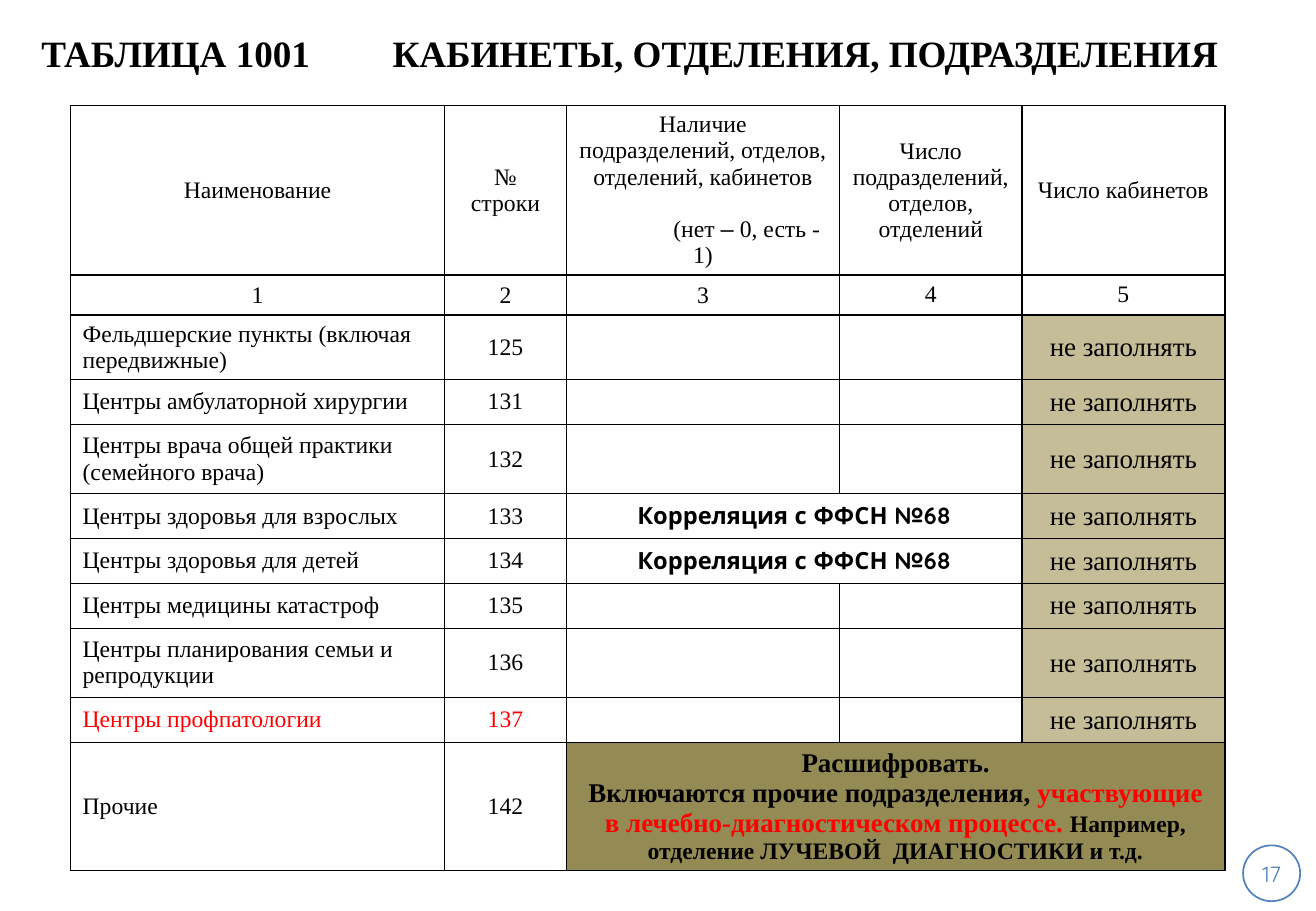
import pptx
import pptx.util
import pptx.dml.color
import pptx.enum.shapes
import pptx.enum.text
import pptx.oxml
import pptx.oxml.ns

Inches = pptx.util.Inches
Pt = pptx.util.Pt
RGBColor = pptx.dml.color.RGBColor
ALIGN = pptx.enum.text.PP_ALIGN
ANCHOR = pptx.enum.text.MSO_ANCHOR
NAMESPACE = pptx.oxml.ns.nsdecls("a")

COLORS = {
    "black": "000000",
    "white": "FFFFFF",
    "red": "FF0000",
    "blue": "4F81BD",
    "not_filled": "C4BD97",
    "explained": "948A54",
}
BASE = {"name": "Times New Roman", "size": Pt(14), "bold": False}
LARGE = {"size": Pt(16)}
LARGE_BOLD = {"size": Pt(16), "bold": True}
CORRELATION = {"name": "Quicksand", "bold": True}


def add_run(paragraph, text, style, color="black"):
    run = paragraph.add_run()
    run.text = text
    for attribute, value in {**BASE, **style}.items():
        setattr(run.font, attribute, value)
    run.font.color.rgb = RGBColor.from_string(COLORS[color])


def fill_half_transparent(cell, color):
    cell.fill.solid()
    cell.fill.fore_color.rgb = RGBColor.from_string(COLORS[color])
    color_element = cell._tc.tcPr.find(".//" + pptx.oxml.ns.qn("a:srgbClr"))
    color_element.append(pptx.oxml.parse_xml(f'<a:alpha {NAMESPACE} val="50000"/>'))


presentation = pptx.Presentation()
presentation.slide_width = Inches(10.83)
presentation.slide_height = Inches(7.5)
slide = presentation.slides.add_slide(presentation.slide_layouts[5])

# Title, its two parts set apart by a tab stop
title = slide.shapes.title
title.left, title.top = Inches(0.34), Inches(0)
title.width, title.height = Inches(10.28), Inches(0.86)
title_format = {
    "margin_left": 0, "margin_right": Inches(0.09),
    "margin_top": Inches(0.05), "margin_bottom": Inches(0.05),
    "vertical_anchor": ANCHOR.MIDDLE, "word_wrap": True,
    "auto_size": pptx.enum.text.MSO_AUTO_SIZE.NONE,
}
for attribute, value in title_format.items():
    setattr(title.text_frame, attribute, value)
paragraph = title.text_frame.paragraphs[0]
paragraph.alignment = ALIGN.LEFT
paragraph._p.get_or_add_pPr().append(pptx.oxml.parse_xml(
    f'<a:tabLst {NAMESPACE}><a:tab pos="{Inches(2.89)}" algn="l"/></a:tabLst>'))
add_run(paragraph, "ТАБЛИЦА 1001\tКАБИНЕТЫ, ОТДЕЛЕНИЯ, ПОДРАЗДЕЛЕНИЯ",
        {"size": Pt(22), "bold": True})

# Table contents
headers = [
    "Наименование", "№ строки",
    "Наличие подразделений, отделов, отделений, кабинетов",
    "Число подразделений, отделов, отделений", "Число кабинетов",
]
departments = [
    ("Фельдшерские пункты (включая передвижные)", "125"),
    ("Центры амбулаторной хирургии", "131"),
    ("Центры врача общей практики (семейного врача)", "132"),
    ("Центры здоровья для взрослых", "133"),
    ("Центры здоровья для детей", "134"),
    ("Центры медицины катастроф", "135"),
    ("Центры планирования семьи и репродукции", "136"),
    ("Центры профпатологии", "137"),
    ("Прочие", "142"),
]
column_widths = [3.08, 1, 2.25, 1.5, 1.67]
row_heights = [1.03, 0.33, 0.37, 0.37, 0.57, 0.37, 0.37, 0.37, 0.57, 0.37, 0.9]

frame = slide.shapes.add_table(
    len(row_heights), len(column_widths), Inches(0.58), Inches(0.87),
    Inches(sum(column_widths)), Inches(sum(row_heights)))
table = frame.table
table.first_row = False
table.horz_banding = False
for column, width in zip(table.columns, column_widths):
    column.width = Inches(width)
for row, height in zip(table.rows, row_heights):
    row.height = Inches(height)

for cell in table.iter_cells():
    cell.vertical_anchor = ANCHOR.MIDDLE
    cell.text_frame.paragraphs[0].alignment = ALIGN.CENTER
    for position, side in enumerate(["lnL", "lnR", "lnT", "lnB"]):
        cell._tc.get_or_add_tcPr().insert(position, pptx.oxml.parse_xml(
            f'<a:{side} {NAMESPACE} w="{Pt(1)}"><a:solidFill>'
            f'<a:srgbClr val="{COLORS["black"]}"/></a:solidFill></a:{side}>'))
    cell.fill.background()

# Heading rows
for index, header in enumerate(headers):
    add_run(table.cell(0, index).text_frame.paragraphs[0], header, {})
    number_cell = table.cell(1, index)
    number_cell.vertical_anchor = ANCHOR.BOTTOM if index < 3 else ANCHOR.TOP
    add_run(number_cell.text_frame.paragraphs[0], str(index + 1), {})

paragraph = table.cell(0, 2).text_frame.add_paragraph()
paragraph.alignment = ALIGN.CENTER
paragraph.space_before = Pt(15.5)
paragraph._p.get_or_add_pPr().set("indent", str(Inches(0.72)))
for text, style in [("(нет ", {}), ("–", {"name": "Arial"}), (" 0, есть - 1)", {})]:
    add_run(paragraph, text, style)

# Department rows
for row_index, (department, line_number) in enumerate(departments, start=2):
    cells = [table.cell(row_index, index) for index in range(len(headers))]
    paragraphs = [cell.text_frame.paragraphs[0] for cell in cells]
    color = "red" if line_number == "137" else "black"
    paragraphs[0].alignment = ALIGN.LEFT
    add_run(paragraphs[0], department, {}, color)
    add_run(paragraphs[1], line_number, {}, color)
    if line_number in ("133", "134"):
        cells[2].merge(cells[3])
        add_run(paragraphs[2], "Корреляция с ФФСН №68", CORRELATION)
    if line_number != "142":
        add_run(paragraphs[4], "не заполнять", LARGE)
        fill_half_transparent(cells[4], "not_filled")

# Explanation in the last row
explanation = table.cell(len(row_heights) - 1, 2)
explanation.merge(table.cell(len(row_heights) - 1, 4))
explanation.vertical_anchor = ANCHOR.BOTTOM
fill_half_transparent(explanation, "explained")
add_run(explanation.text_frame.paragraphs[0], "Расшифровать.", LARGE_BOLD)
paragraph = explanation.text_frame.add_paragraph()
paragraph.alignment = ALIGN.CENTER
for text, style, color in [
    ("Включаются прочие подразделения, ", LARGE_BOLD, "black"),
    ("участвующие в лечебно-диагностическом процессе. ", LARGE_BOLD, "red"),
    ("Например, отделение ЛУЧЕВОЙ  ДИАГНОСТИКИ и т.д.", {"bold": True}, "black"),
]:
    add_run(paragraph, text, style, color)

# Empty cells keep the text size, so that rows do not grow
for cell in table.iter_cells():
    if not cell.text_frame.text:
        cell.text_frame.paragraphs[0]._p.append(pptx.oxml.parse_xml(
            f'<a:endParaRPr {NAMESPACE} sz="1400"/>'))

# Page number
page_badge = slide.shapes.add_shape(
    pptx.enum.shapes.MSO_SHAPE.OVAL,
    Inches(10.23), Inches(6.96), Inches(0.47), Inches(0.46))
page_badge.shadow.inherit = False
page_badge.fill.background()
page_badge.line.color.rgb = RGBColor.from_string(COLORS["blue"])
page_badge.line.width = Pt(1)
for side in ["left", "right", "top", "bottom"]:
    setattr(page_badge.text_frame, f"margin_{side}", 0)
page_badge.text_frame.vertical_anchor = ANCHOR.MIDDLE
paragraph = page_badge.text_frame.paragraphs[0]
paragraph.alignment = ALIGN.CENTER
add_run(paragraph, "17", {"name": "Quicksand", "size": Pt(13)}, "blue")

presentation.save("out.pptx")
